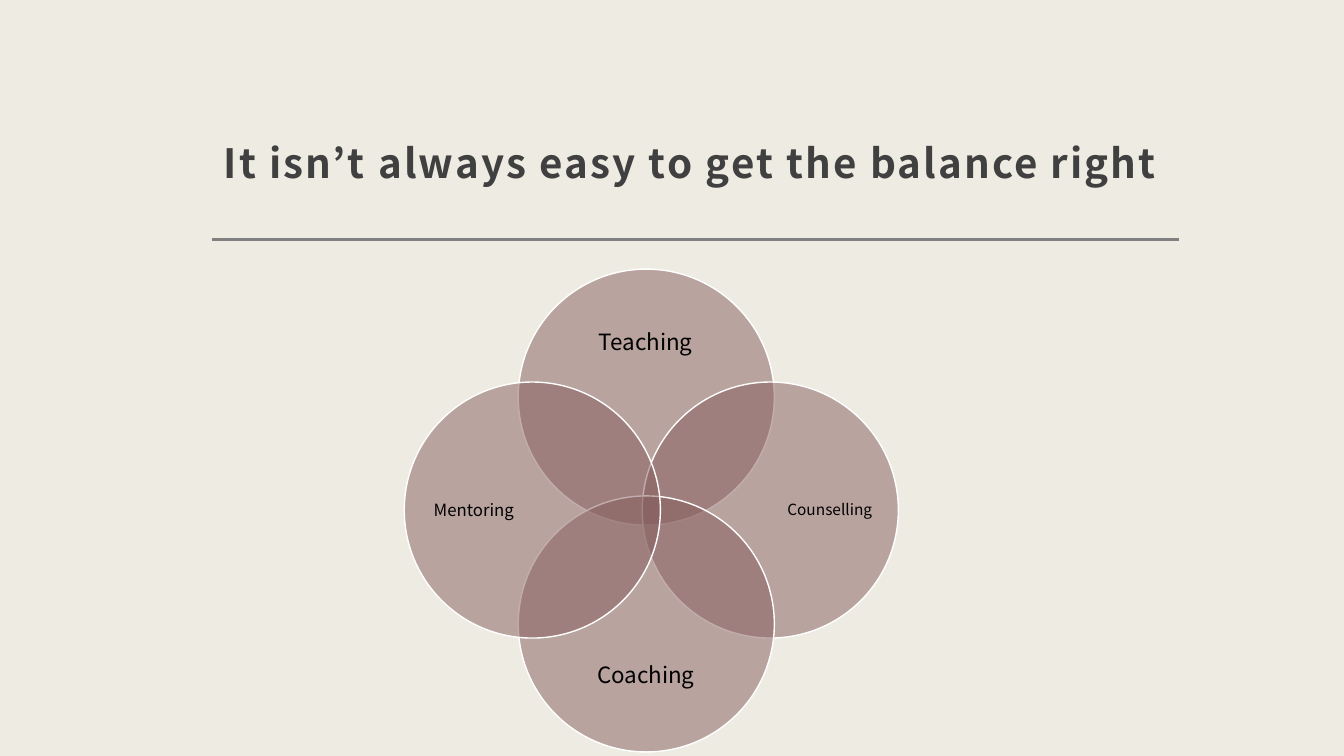
from dataclasses import dataclass

import pptx
import pptx.dml.color
import pptx.enum.shapes
import pptx.enum.text
import pptx.oxml.ns
import pptx.oxml.xmlchemy
import pptx.util
from pptx.util import Inches

FONT = "Noto Sans CJK JP"
DIAMETER = 2.54
ANCHOR = pptx.enum.text.MSO_ANCHOR
ALIGN = pptx.enum.text.PP_ALIGN


@dataclass
class Role:
    name: str
    left: float
    top: float
    label_box: tuple[float, float, float, float]
    size: float


ROLES = [
    Role("Teaching", 5.14, 2.67, (5.43, 3.01, 1.95, 0.8), 16),
    Role("Counselling", 6.37, 3.79, (7.74, 4.09, 0.98, 1.95), 11),
    Role("Coaching", 5.14, 4.92, (5.43, 6.31, 1.95, 0.8), 16),
    Role("Mentoring", 4.01, 3.79, (4.21, 4.09, 0.98, 1.95), 12),
]


def paint(color_format, color: str) -> None:
    color_format.rgb = pptx.dml.color.RGBColor.from_string(color)


def apply(target, formats: dict) -> None:
    for name, value in formats.items():
        setattr(target, name, value)


def write(frame, text: str, size: float, color: str, bold: bool,
          margins: tuple[float, float, float, float], frame_formats: dict,
          para_formats: dict):
    sides = ("margin_left", "margin_top", "margin_right", "margin_bottom")
    apply(frame, dict(zip(sides, map(Inches, margins))))
    apply(frame, {"word_wrap": True,
                  "auto_size": pptx.enum.text.MSO_AUTO_SIZE.NONE,
                  **frame_formats})
    para = frame.paragraphs[0]
    apply(para, para_formats)
    span = para.add_run()
    span.text = text
    apply(span.font, {"name": FONT, "size": pptx.util.Pt(size), "bold": bold})
    paint(span.font.color, color)
    return span


def add_title(page, text: str) -> None:
    title = page.shapes.title
    apply(title, {"left": Inches(2.1), "top": Inches(0.48),
                  "width": Inches(9.59), "height": Inches(1.47)})
    span = write(title.text_frame, text, 28.8, "404040", True,
                 (0.12, 0.12, 0.12, 0.1), {"vertical_anchor": ANCHOR.BOTTOM},
                 {"alignment": ALIGN.LEFT, "line_spacing": 1.3})
    span._r.get_or_add_rPr().set("spc", "150")


def add_rule(page) -> None:
    rule = page.shapes.add_connector(
        pptx.enum.shapes.MSO_CONNECTOR.STRAIGHT,
        Inches(2.1), Inches(2.38), Inches(11.69), Inches(2.38))
    paint(rule.line.color, "808080")
    rule.line.width = pptx.util.Pt(2)
    rule._element.spPr.append(pptx.oxml.xmlchemy.OxmlElement("a:effectLst"))


def add_role(page, role: Role) -> None:
    circle = page.shapes.add_shape(
        pptx.enum.shapes.MSO_SHAPE.OVAL, Inches(role.left), Inches(role.top),
        Inches(DIAMETER), Inches(DIAMETER))
    circle.shadow.inherit = False
    circle.fill.solid()
    paint(circle.fill.fore_color, "855D5D")
    fill_color = circle._element.spPr.find(
        pptx.oxml.ns.qn("a:solidFill")).find(pptx.oxml.ns.qn("a:srgbClr"))
    alpha = pptx.oxml.xmlchemy.OxmlElement("a:alpha")
    alpha.set("val", "50000")
    fill_color.append(alpha)
    paint(circle.line.color, "FFFFFF")
    circle.line.width = pptx.util.Pt(1)

    label = page.shapes.add_textbox(*map(Inches, role.label_box))
    write(label.text_frame, role.name, role.size, "000000", False,
          (0, 0, 0, 0), {"vertical_anchor": ANCHOR.MIDDLE},
          {"alignment": ALIGN.CENTER, "line_spacing": 0.9})


def main() -> None:
    deck = pptx.Presentation()
    apply(deck, {"slide_width": Inches(13.33), "slide_height": Inches(7.5)})
    page = deck.slides.add_slide(deck.slide_layouts[5])
    page.background.fill.solid()
    paint(page.background.fill.fore_color, "EEEBE2")
    add_rule(page)
    add_title(page, "It isn’t always easy to get the balance right")
    for role in ROLES:
        add_role(page, role)
    deck.save("out.pptx")


if __name__ == "__main__":
    main()
